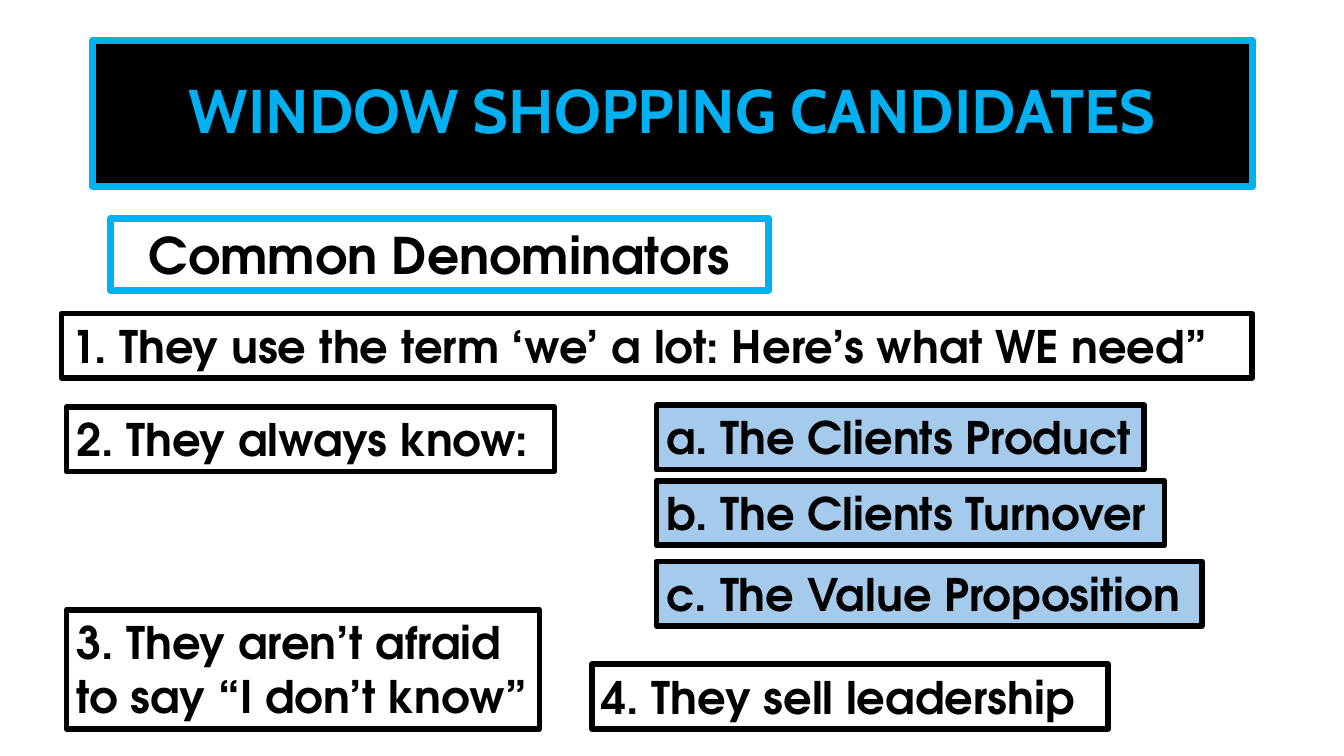
from pptx import Presentation
from pptx import util as u
from pptx.dml.color import RGBColor
from pptx.enum import text

BLACK = RGBColor(0x00, 0x00, 0x00)
BRIGHT_BLUE = RGBColor(0x00, 0xB0, 0xF0)
PALE_BLUE = RGBColor(0xA6, 0xCA, 0xEC)

TITLE_FONT = "Cabin"
BODY_FONT = "TeX Gyre Adventor"
LINE_HEIGHT = 0.64

TITLE = ("WINDOW SHOPPING CANDIDATES", (0.92, 0.4, 11.5, 1.45))
SUBTITLE = ("Common Denominators", (1.1, 2.17, 6.52, 0.71))
POINTS = [
    ("1. They use the term ‘we’ a lot: Here’s what WE need”", (0.61, 3.11, 11.81, LINE_HEIGHT)),
    ("2. They always know:", (0.66, 4.04, 4.84, LINE_HEIGHT)),
    ("3. They aren’t afraid to say “I don’t know”", (0.66, 6.05, 4.69, 1.18)),
    ("4. They sell leadership", (5.87, 6.59, 5.12, LINE_HEIGHT)),
]
KNOWN_LEFT = 6.51
KNOWN_FACTS = [
    ("a. The Clients Product", 4.02, 4.84),
    ("b. The Clients Turnover", 4.77, 5.04),
    ("c. The Value Proposition", 5.57, 5.41),
]


def add_box(slide, words, position, size=32, font=BODY_FONT, color=BLACK,
            border=BLACK, border_width=4, fill=None, centred=False):
    shape = slide.shapes.add_textbox(*(u.Inches(length) for length in position))
    shape.line.color.rgb = border
    shape.line.width = u.Pt(border_width)
    if fill is not None:
        shape.fill.solid()
        shape.fill.fore_color.rgb = fill
    frame = shape.text_frame
    frame.word_wrap = True
    frame.auto_size = text.MSO_AUTO_SIZE.SHAPE_TO_FIT_TEXT
    paragraph = frame.paragraphs[0]
    paragraph.alignment = text.PP_ALIGN.CENTER if centred else text.PP_ALIGN.LEFT
    run = paragraph.add_run()
    run.text = words
    run.font.name = font
    run.font.size = u.Pt(size)
    run.font.bold = True
    run.font.color.rgb = color
    return shape


def main():
    presentation = Presentation()
    presentation.slide_width = u.Inches(13.33)
    presentation.slide_height = u.Inches(7.5)
    slide = presentation.slides.add_slide(presentation.slide_layouts[6])

    title = add_box(slide, *TITLE, size=44, font=TITLE_FONT, color=BRIGHT_BLUE,
                    border=BRIGHT_BLUE, border_width=5, fill=BLACK, centred=True)
    title.text_frame.auto_size = text.MSO_AUTO_SIZE.NONE
    title.text_frame.vertical_anchor = text.MSO_ANCHOR.MIDDLE
    title.text_frame.paragraphs[0].line_spacing = 0.9

    add_box(slide, *SUBTITLE, size=36, border=BRIGHT_BLUE, border_width=5, centred=True)
    for words, position in POINTS:
        add_box(slide, words, position)
    for words, top, width in KNOWN_FACTS:
        add_box(slide, words, (KNOWN_LEFT, top, width, LINE_HEIGHT), fill=PALE_BLUE)

    presentation.save("out.pptx")


if __name__ == "__main__":
    main()
